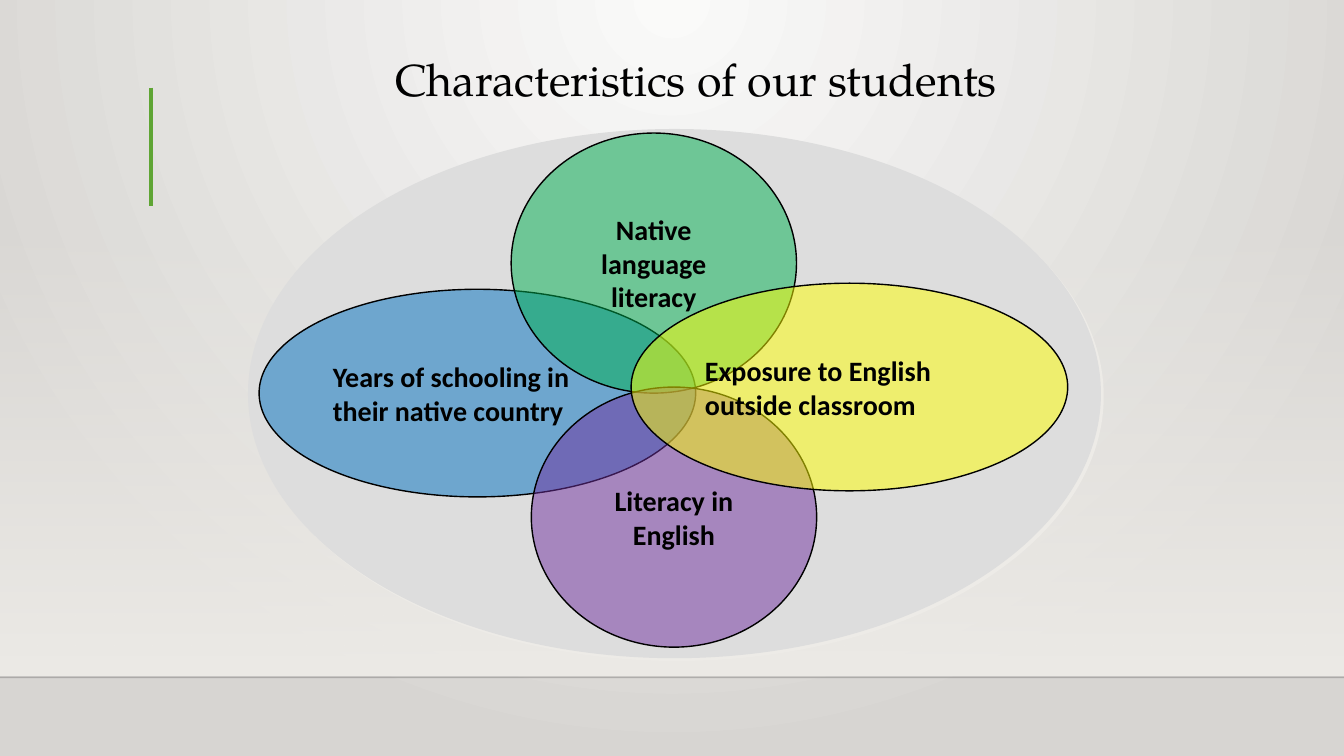
import pptx
import pptx.util
import pptx.dml.color
import pptx.enum.shapes
import pptx.enum.text
import pptx.oxml
import pptx.oxml.ns

Inches = pptx.util.Inches
Pt = pptx.util.Pt
SHAPES = pptx.enum.shapes.MSO_SHAPE
ALIGN = pptx.enum.text.PP_ALIGN
ANCHOR = pptx.enum.text.MSO_ANCHOR
qn = pptx.oxml.ns.qn
NAMESPACE = pptx.oxml.ns.nsdecls("a")
WIDTH, HEIGHT = 13.33, 7.5


def color(hex_text):
    """Turn a hex string into a colour."""
    return pptx.dml.color.RGBColor.from_string(hex_text)


def set_alpha(properties, percent):
    """Make the solid colour inside the given properties translucent."""
    rgb = properties.find(".//" + qn("a:srgbClr"))
    rgb.append(pptx.oxml.parse_xml(f'<a:alpha {NAMESPACE} val="{percent * 1000}"/>'))


def replace_fill(properties, stops, direction):
    """Put a gradient of (position, hex, alpha) stops in place of a solid fill."""
    stop_xml = "".join(
        f'<a:gs pos="{position * 1000}"><a:srgbClr val="{hex_text}">'
        f'<a:alpha val="{alpha * 1000}"/></a:srgbClr></a:gs>'
        for position, hex_text, alpha in stops
    )
    gradient = pptx.oxml.parse_xml(
        f'<a:gradFill {NAMESPACE} rotWithShape="1"><a:gsLst>{stop_xml}</a:gsLst>'
        f"{direction}</a:gradFill>"
    )
    properties.replace(properties.find(qn("a:solidFill")), gradient)


def add_filled_shape(slide, kind, box, fill):
    """Add a shape with a solid fill, no outline and no shadow."""
    shape = slide.shapes.add_shape(kind, *map(Inches, box))
    shape.shadow.inherit = False
    shape.fill.solid()
    shape.fill.fore_color.rgb = color(fill)
    shape.line.fill.background()
    return shape


def add_line(slide, start, end, line_color, weight):
    """Add a straight line without a shadow."""
    connector = slide.shapes.add_connector(
        pptx.enum.shapes.MSO_CONNECTOR.STRAIGHT, *map(Inches, start + end)
    )
    connector.line.color.rgb = color(line_color)
    connector.line.width = Pt(weight)
    connector.element.spPr.append(pptx.oxml.parse_xml(f"<a:effectLst {NAMESPACE}/>"))
    return connector


def add_text(frame, text, font_name, size, alignment, bold=False):
    """Write one black paragraph into a wrapping text frame."""
    frame.word_wrap = True
    paragraph = frame.paragraphs[0]
    paragraph.alignment = alignment
    run = paragraph.add_run()
    run.text = text
    run.font.name = font_name
    run.font.size = Pt(size)
    run.font.bold = bold
    run.font.color.rgb = color("000000")
    return paragraph


def add_backdrop(slide, floor_top):
    """Draw the radial background, the fading wall and the floor line."""
    slide.background.fill.solid()
    replace_fill(
        slide.element.find(".//" + qn("p:bgPr")),
        [(0, "FAFAF9", 100), (100, "D7D5D2", 100)],
        '<a:path path="circle"><a:fillToRect l="43000" t="0" r="43000" b="100000"/></a:path>',
    )
    wall = add_filled_shape(slide, SHAPES.RECTANGLE, (0, floor_top - 4.52, WIDTH, 4.5), "EDEBE7")
    replace_fill(
        wall.element.spPr,
        [(0, "EDEBE7", 0), (100, "EDEBE7", 100)],
        '<a:lin ang="5400000" scaled="0"/>',
    )
    floor = add_line(slide, (0, floor_top), (WIDTH, floor_top), "000001", 1)
    set_alpha(floor.element.spPr, 20)


def add_title(slide, box, text):
    """Write the heading with the green accent line to its left."""
    left, top, _, _ = box
    add_line(slide, (left - 0.2, top + 0.35), (left - 0.2, top + 1.52), "5FA534", 3)
    frame = slide.shapes.add_textbox(*map(Inches, box)).text_frame
    add_text(frame, text, "TeX Gyre Pagella", 32, ALIGN.CENTER).line_spacing = 0.9


def add_venn(slide, box):
    """Draw four overlapping ellipses on a large grey ellipse."""
    left, top, _, _ = box
    ground = add_filled_shape(slide, SHAPES.OVAL, box, "DDDDDD")
    ground.element.spPr.find(qn("a:effectLst")).append(pptx.oxml.parse_xml(
        f'<a:outerShdw {NAMESPACE} dist="35560" dir="2700000" algn="ctr" rotWithShape="0">'
        '<a:srgbClr val="EDEBE7"/></a:outerShdw>'
    ))
    wide, round_size = (4.33, 2.06), (2.83, 2.58)
    traits = [
        ("Years of schooling in their native country", 0.11, 1.59, wide, "0070C0", ALIGN.LEFT),
        ("Native language literacy", 2.61, 0.04, round_size, "00B050", ALIGN.CENTER),
        ("Literacy in English", 2.81, 2.56, round_size, "7030A0", ALIGN.CENTER),
        ("Exposure to English outside classroom", 3.8, 1.53, wide, "FFFF00", ALIGN.LEFT),
    ]
    for text, across, down, size, fill, alignment in traits:
        ellipse = add_filled_shape(slide, SHAPES.OVAL, (left + across, top + down, *size), fill)
        set_alpha(ellipse.element.spPr, 50)
        ellipse.line.color.rgb = color("000000")
        ellipse.line.width = Pt(1)
        ellipse.text_frame.vertical_anchor = ANCHOR.MIDDLE
        add_text(ellipse.text_frame, text, "Calibri", 20, alignment, bold=True)


def main():
    """Build the slide and save it."""
    presentation = pptx.Presentation()
    presentation.slide_width = Inches(WIDTH)
    presentation.slide_height = Inches(HEIGHT)
    slide = presentation.slides.add_slide(presentation.slide_layouts[6])
    add_backdrop(slide, 6.72)
    add_title(slide, (1.7, 0.52, 10.41, 1.15), "Characteristics of our students")
    add_venn(slide, (2.46, 1.28, 8.46, 5.25))
    presentation.save("out.pptx")


if __name__ == "__main__":
    main()
